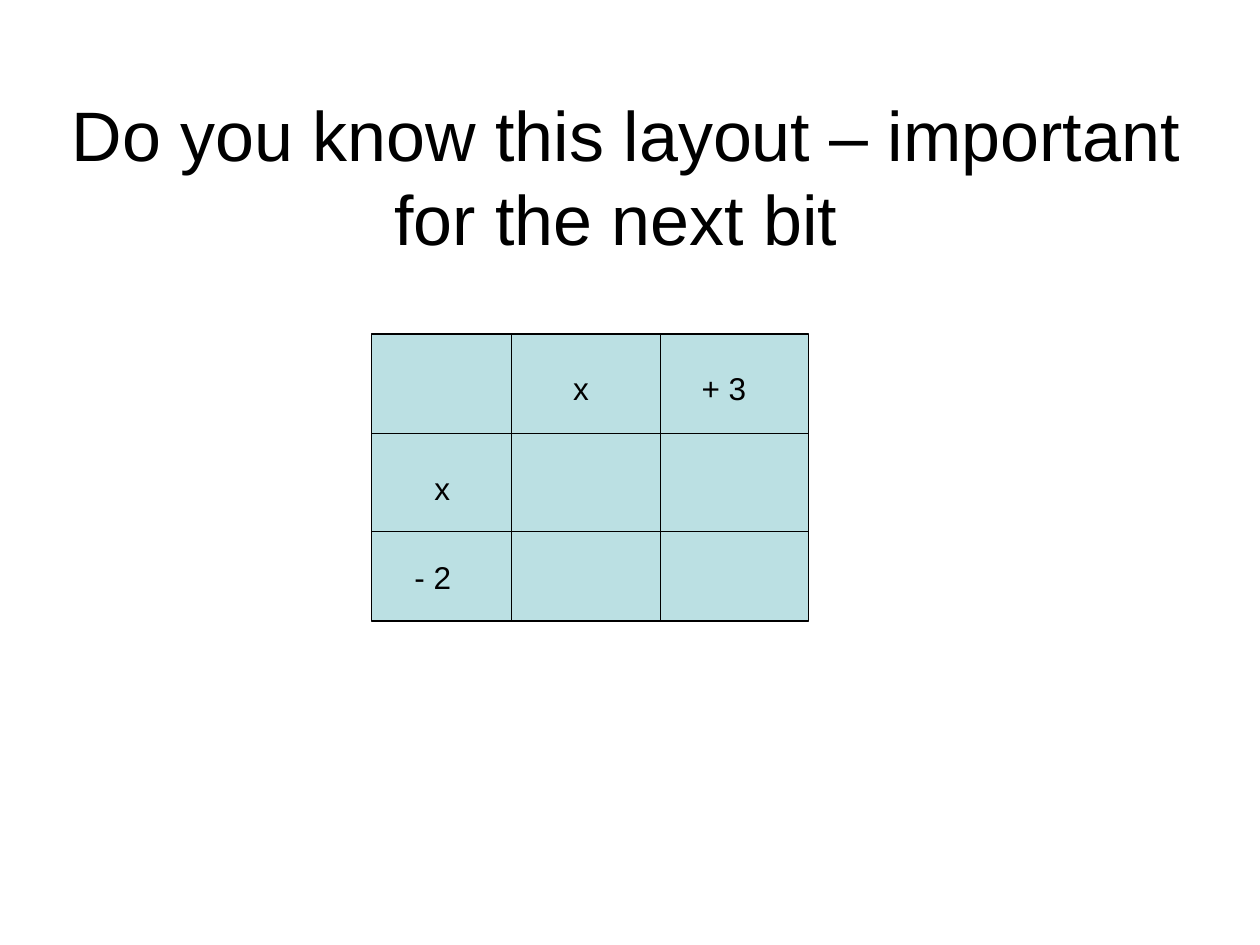
from dataclasses import dataclass

from pptx import Presentation
from pptx.dml.color import RGBColor
from pptx.enum.shapes import MSO_CONNECTOR, MSO_SHAPE
from pptx.enum.text import MSO_ANCHOR, MSO_AUTO_SIZE, PP_ALIGN
from pptx.oxml.ns import qn
from pptx.util import Inches, Pt


@dataclass(frozen=True)
class Theme:
    ink: RGBColor = RGBColor(0x00, 0x00, 0x00)
    grid_fill: RGBColor = RGBColor(0xBB, 0xE0, 0xE3)
    font: str = "Arial"
    title_size: Pt = Pt(40)
    label_size: Pt = Pt(18)
    line_width: Pt = Pt(0.75)


THEME = Theme()

# Grid edges and inner dividers, in inches
LEFT, TOP, RIGHT, BOTTOM = 2.95, 2.65, 6.42, 4.93
COLUMN_EDGES = (4.06, 5.24)
ROW_EDGES = (3.44, 4.22)

# Label text, left, top, width, wrap
LABELS = (
    ("x", 4.45, 2.88, 0.33, False),
    ("+ 3", 5.47, 2.88, 0.56, False),
    ("x", 3.35, 3.67, 0.24, True),
    ("- 2", 3.19, 4.38, 0.71, True),
)
LABEL_HEIGHT = 0.4


def apply_format(target, values):
    for name, value in values.items():
        setattr(target, name, value)


def write_text(frame, text, size, alignment):
    para = frame.paragraphs[0]
    para.alignment = alignment
    span = para.add_run()
    span.text = text
    apply_format(span.font, {"name": THEME.font, "size": size})
    span.font.color.rgb = THEME.ink


def style_line(line):
    line.color.rgb = THEME.ink
    line.width = THEME.line_width


def add_title(slide, text):
    title = slide.shapes.title
    apply_format(title, {"left": Inches(0.43), "top": Inches(1.23),
                         "width": Inches(9.07), "height": Inches(0.32)})
    apply_format(title.text_frame, {"word_wrap": True,
                                    "auto_size": MSO_AUTO_SIZE.NONE,
                                    "vertical_anchor": MSO_ANCHOR.MIDDLE})
    write_text(title.text_frame, text, THEME.title_size, PP_ALIGN.CENTER)


def add_panel(shapes):
    panel = shapes.add_shape(MSO_SHAPE.RECTANGLE, Inches(LEFT), Inches(TOP),
                             Inches(RIGHT - LEFT), Inches(BOTTOM - TOP))
    panel.shadow.inherit = False
    panel.fill.solid()
    panel.fill.fore_color.rgb = THEME.grid_fill
    style_line(panel.line)


def add_divider(shapes, *ends):
    divider = shapes.add_connector(MSO_CONNECTOR.STRAIGHT,
                                   *(Inches(end) for end in ends))
    style_line(divider.line)
    properties = divider._element.spPr
    properties.append(properties.makeelement(qn("a:effectLst"), {}))


def add_label(shapes, text, left, top, width, wrap):
    box = shapes.add_textbox(Inches(left), Inches(top),
                             Inches(width), Inches(LABEL_HEIGHT))
    apply_format(box.text_frame, {"word_wrap": wrap,
                                  "auto_size": MSO_AUTO_SIZE.SHAPE_TO_FIT_TEXT})
    write_text(box.text_frame, text, THEME.label_size, PP_ALIGN.LEFT)


def main():
    deck = Presentation()
    apply_format(deck, {"slide_width": Inches(10), "slide_height": Inches(7.5)})
    slide = deck.slides.add_slide(deck.slide_layouts[5])

    # The trailing space counts in the centring of the last line
    add_title(slide, "Do you know this layout – important for the next bit ")

    # Multiplication grid
    grid = slide.shapes.add_group_shape().shapes
    add_panel(grid)
    for x in COLUMN_EDGES:
        add_divider(grid, x, TOP, x, BOTTOM)
    for y in ROW_EDGES:
        add_divider(grid, LEFT, y, RIGHT, y)

    # Terms along the top and the side
    for label in LABELS:
        add_label(grid, *label)

    deck.save("out.pptx")


if __name__ == "__main__":
    main()
